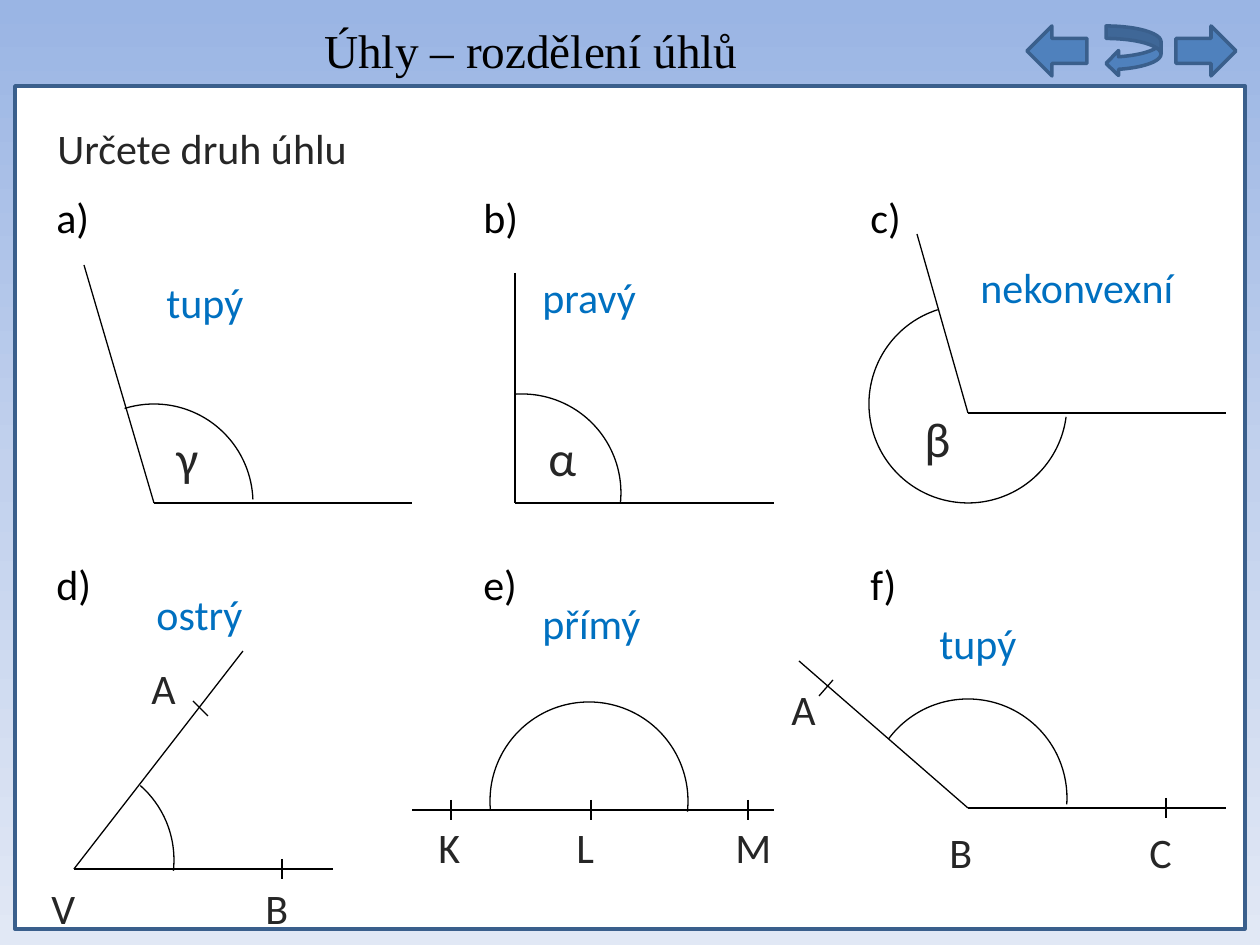
from copy import deepcopy

from lxml import etree
from pptx import Presentation
from pptx.dml.color import RGBColor
from pptx.enum.shapes import MSO_CONNECTOR, MSO_SHAPE
from pptx.enum.text import MSO_ANCHOR, MSO_AUTO_SIZE, PP_ALIGN
from pptx.oxml.ns import qn
from pptx.util import Emu, Pt

STRAIGHT = MSO_CONNECTOR.STRAIGHT
ARC, RECT = MSO_SHAPE.ARC, MSO_SHAPE.RECTANGLE
LEFT, RIGHT = MSO_SHAPE.LEFT_ARROW, MSO_SHAPE.RIGHT_ARROW
BACK = MSO_SHAPE.CURVED_LEFT_ARROW
CENTER, MIDDLE, NO_FIT = PP_ALIGN.CENTER, MSO_ANCHOR.MIDDLE, MSO_AUTO_SIZE.NONE

BLACK, GREY, WHITE = "000000", "262626", "FFFFFF"
ANSWER, BUTTON, BORDER = "0070C0", "4F81BD", "3A5F8C"
GRADIENT = [(0, "9AB5E4"), (0.5, "C2D1ED"), (1, "E1E8F5")]
COLUMNS, ROWS = (44, 471, 858), (185, 552)
RADIUS, TILT = 99, 6.9

ANGLES = [
    dict(label="a)", answer=("tupý", 110, 85), letters=[("γ", 120, 236, 28)],
         lines=[(368, 318, 110, 318), (40, 80, 110, 318)],
         arc=(110, 318, 245.81, 351)),
    dict(label="b)", answer=("pravý", 59, 80), letters=[("α", 65, 236, 28)],
         lines=[(303, 318, 44, 318), (44, 88, 44, 318)],
         arc=(51, 308, 259.47, 359.36)),
    dict(label="c)", answer=("nekonvexní", 110, 70), letters=[("β", 54, 217, 28)],
         lines=[(368, 228, 110, 228), (59, 49, 110, 228)],
         arc=(110, 219, 0.56, 245.31)),
    dict(label="d)", answer=("ostrý", 100, 30),
         letters=[("V", -5, 324, 24), ("B", 209, 324, 24), ("A", 95, 104, 24)],
         lines=[(289, 317, 30, 317), (199, 99, 30, 317),
                (238, 307, 238, 327), (149, 149, 164, 164)],
         arc=(31, 308, 304.38, 359.36)),
    dict(label="e)", answer=("přímý", 59, 39),
         letters=[("K", -45, 263, 24), ("L", 93, 263, 24), ("M", 252, 263, 24)],
         lines=[(303, 258, -59, 258)] + [(x, 248, x, 268) for x in (-20, 120, 277)],
         arc=(118, 249, 167.73, 359.36)),
    dict(label="f)", answer=("tupý", 69, 59),
         letters=[("A", -79, 125, 24), ("B", 79, 268, 24), ("C", 279, 268, 24)],
         lines=[(368, 256, 110, 256), (-59, 109, 110, 256),
                (308, 246, 308, 266), (-25, 128, -39, 144)],
         arc=(110, 246, 209.53, 356.79)),
]


def px(n):
    """Turn px at 126 to the inch into EMU."""
    return Emu(round(n * 914400 / 126))


def rgb(value):
    """Turn a hex string into a colour."""
    return RGBColor.from_string(value)


def add_text(s, text, x, y, w, h, size, color):
    """Place one line of Calibri text."""
    tf = s.shapes.add_textbox(px(x), px(y), px(w), px(h)).text_frame
    tf.word_wrap = True
    p = tf.paragraphs[0]
    p.text = text
    p.font.name, p.font.size = "Calibri", Pt(size)
    p.font.color.rgb = rgb(color)


def add_shape(s, kind, x, y, w, h, fill, line, width):
    """Place a preset shape, unfilled if fill is None."""
    sp = s.shapes.add_shape(kind, px(x), px(y), px(w), px(h))
    sp.shadow.inherit = False
    if fill:
        sp.fill.solid()
        sp.fill.fore_color.rgb = rgb(fill)
    else:
        sp.fill.background()
    sp.line.color.rgb = rgb(line)
    sp.line.width = Pt(width)
    return sp


def add_line(s, x1, y1, x2, y2):
    """Draw a thin black straight line."""
    c = s.shapes.add_connector(STRAIGHT, px(x1), px(y1), px(x2), px(y2))
    c.line.color.rgb = rgb(BLACK)
    c.line.width = Pt(0.75)
    etree.SubElement(c.element.spPr, qn("a:effectLst"))


def add_arc(s, cx, cy, start, end):
    """Draw an arc around a centre between two angles in degrees."""
    sp = add_shape(s, ARC, cx - RADIUS, cy - RADIUS, 2 * RADIUS, 2 * RADIUS,
                   None, BLACK, 0.75)
    sp.rotation = TILT
    for i, degrees in enumerate((start, end)):
        sp.adjustments[i] = degrees * 0.6


def add_angle(s, x, y, label, answer, letters, lines, arc):
    """Draw one exercise with its corner at x, y."""
    add_text(s, label, x, y, 89, 88, 24, BLACK)
    for x1, y1, x2, y2 in lines:
        add_line(s, x + x1, y + y1, x + x2, y + y2)
    cx, cy, start, end = arc
    add_arc(s, x + cx, y + cy, start, end)
    for text, dx, dy, size in letters:
        add_text(s, text, x + dx, y + dy, 66, 64, size, GREY)
    text, dx, dy = answer
    add_text(s, text, x + dx, y + dy, 268 if len(text) > 5 else 159, 64, 24, ANSWER)


def add_background(s):
    """Fill the background with a vertical gradient."""
    fill = s.background.fill
    fill.gradient()
    fill.gradient_angle = 270
    stops = s.element.xpath(".//a:gsLst")[0]
    stops.append(deepcopy(stops[-1]))
    for stop, (position, color) in zip(fill.gradient_stops, GRADIENT):
        stop.position = position
        stop.color.rgb = rgb(color)


def add_title(s, text, x, y, w, h):
    """Move and format the title placeholder."""
    sp = s.shapes.title
    sp.left, sp.top, sp.width, sp.height = map(px, (x, y, w, h))
    tf = sp.text_frame
    tf.text = text
    tf.auto_size, tf.vertical_anchor = NO_FIT, MIDDLE
    p = tf.paragraphs[0]
    p.alignment = CENTER
    p.font.name, p.font.size = "Times New Roman", Pt(27)
    p.font.color.rgb = rgb(BLACK)


def add_navigation(s, x, y):
    """Place the three navigation buttons in a row."""
    for kind, dx, w in ((LEFT, 0, 60), (BACK, 79, 55), (RIGHT, 149, 60)):
        add_shape(s, kind, x + dx, y, w, 50, BUTTON, BORDER, 2)


def main():
    """Build and save the slide."""
    prs = Presentation()
    prs.slide_width, prs.slide_height = px(1260), px(945)
    s = prs.slides.add_slide(prs.slide_layouts[5])
    add_background(s)
    add_title(s, "Úhly – rozdělení úhlů", 15, 14, 1032, 72)
    add_shape(s, RECT, 15, 86, 1230, 843, WHITE, BORDER, 2)
    add_navigation(s, 1027, 26)
    add_text(s, "Určete druh úhlu", 45, 116, 883, 88, 24, GREY)
    for i, angle in enumerate(ANGLES):
        row, column = divmod(i, len(COLUMNS))
        add_angle(s, COLUMNS[column], ROWS[row], **angle)
    prs.save("out.pptx")


if __name__ == "__main__":
    main()
